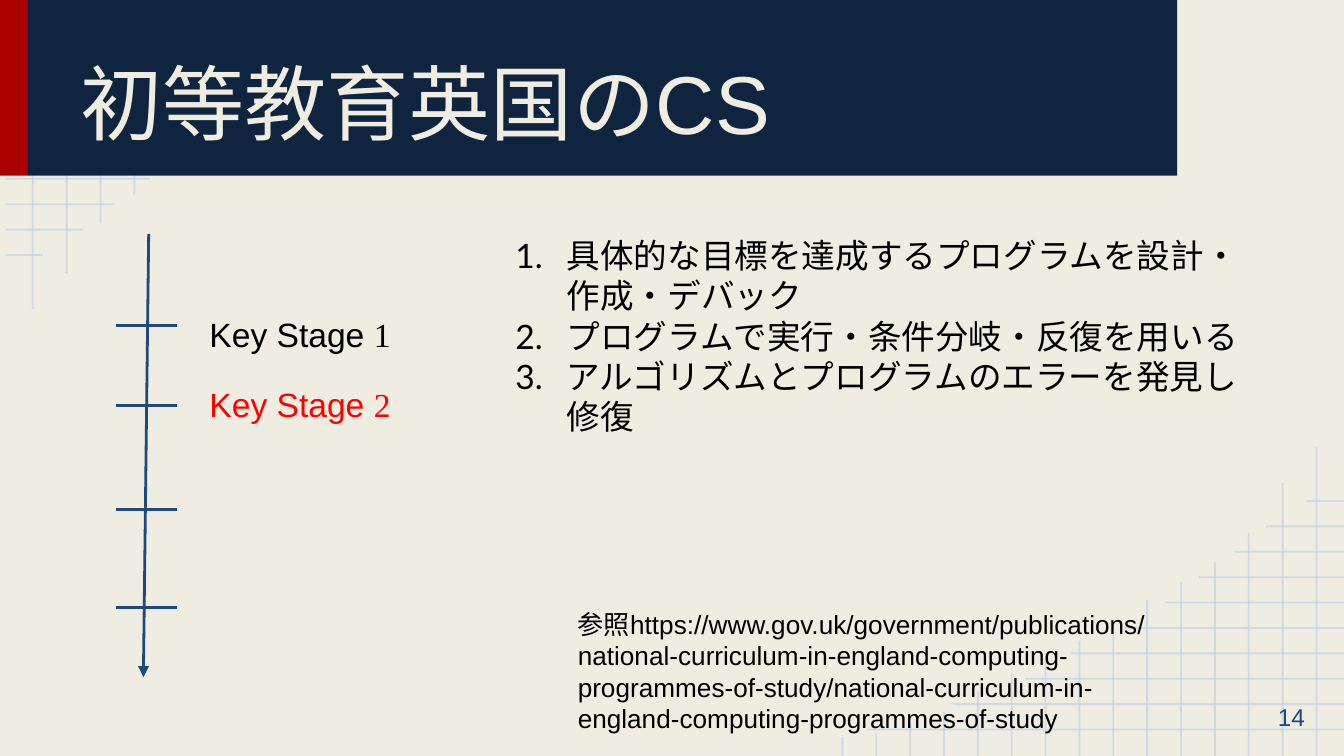
import pptx
import pptx.dml.color
import pptx.enum.shapes
import pptx.enum.text
import pptx.oxml
import pptx.oxml.ns
import pptx.util
from pptx.util import Cm

SLIDE_WIDTH, SLIDE_HEIGHT = 25.4, 14.29
CREAM, NAVY, RED = "EFEDE2", "0F243E", "AB0101"
BLUE, PALE_BLUE = "1F497D", "B7CCE4"
BLACK, HIGHLIGHT = "000000", "FF0000"

ROW_LENGTHS = [9.12, 7.49, 6.12, 5.26, 4.24, 3.48, 2.84, 2.16, 1.57, 0.81]
COLUMN_DEPTHS = [5.84, 5.16, 4.22, 3.68, 3.28, 2.95, 2.51, 2.18,
                 1.83, 1.57, 1.22, 0.84, 0.61, 0.43, 0.36]

GOALS = [
    "具体的な目標を達成するプログラムを設計・作成・デバック",
    "プログラムで実行・条件分岐・反復を用いる",
    "アルゴリズムとプログラムのエラーを発見し修復",
]
REFERENCE = (
    "参照https://www.gov.uk/government/publications/"
    "national-curriculum-in-england-computing-programmes-of-study/"
    "national-curriculum-in-england-computing-programmes-of-study"
)


def color(hex_value):
    return pptx.dml.color.RGBColor.from_string(hex_value)


def add_xml(parent, tag, **attributes):
    child = pptx.oxml.parse_xml(
        f'<a:{tag} xmlns:a="http://schemas.openxmlformats.org/drawingml/2006/main"/>')
    for name, value in attributes.items():
        child.set(name, str(value))
    parent.append(child)
    return child


def add_line(slide, start, end, hex_value, width):
    line = slide.shapes.add_connector(
        pptx.enum.shapes.MSO_CONNECTOR.STRAIGHT,
        *(Cm(value) for value in (*start, *end)))
    line.line.color.rgb = color(hex_value)
    line.line.width = pptx.util.Pt(width)
    add_xml(line.element.spPr, "effectLst")
    return line


def add_run(paragraph, text, size, hex_value, font="Arial"):
    run = paragraph.add_run()
    run.text = text
    run.font.size = pptx.util.Pt(size)
    run.font.color.rgb = color(hex_value)
    run.font.name = font
    add_xml(run.font._element, "ea", typeface=font)


def add_text_frame(slide, box, anchor="TOP"):
    frame = slide.shapes.add_textbox(*(Cm(value) for value in box)).text_frame
    frame.word_wrap = True
    frame.vertical_anchor = getattr(pptx.enum.text.MSO_ANCHOR, anchor)
    frame.margin_left = frame.margin_right = Cm(0.25)
    frame.margin_top = frame.margin_bottom = Cm(0.25)
    return frame


def add_corner_grid(slide, corner, direction):
    """Draw the fading grid from a corner; direction -1 turns it half round."""
    def place(x, y):
        return corner[0] + direction * x, corner[1] + direction * y

    grid_lines = []
    for i, length in enumerate(ROW_LENGTHS):
        y = 0.5 + 0.48 * i
        grid_lines.append((place(0.1, y), place(length, y)))
    for i, depth in enumerate(COLUMN_DEPTHS):
        x = 0.62 + 0.64 * i
        grid_lines.append((place(x, depth), place(x, 0)))
    for start, end in grid_lines:
        line = add_line(slide, start, end, PALE_BLUE, 1)
        tint = line.element.find(".//" + pptx.oxml.ns.qn("a:srgbClr"))
        add_xml(tint, "alpha", val=54000)


def add_title_banner(slide, box, title):
    left, top, width, height = box
    stripe = 0.53
    for x, part_width, fill in ((left, stripe, RED),
                                (left + stripe, width - stripe, NAVY)):
        band = slide.shapes.add_shape(
            pptx.enum.shapes.MSO_SHAPE.RECTANGLE,
            Cm(x), Cm(top), Cm(part_width), Cm(height))
        band.shadow.inherit = False
        band.fill.solid()
        band.fill.fore_color.rgb = color(fill)
        band.line.fill.background()
    frame = add_text_frame(
        slide, (left + 1.27, top + 0.31, 20.32, height - 0.53), "BOTTOM")
    add_run(frame.paragraphs[0], title, 44, CREAM)


def add_stage_timeline(slide, box):
    left, top, width, height = box
    arrow = add_line(slide, (left + 0.61, top), (left + 0.51, top + height), BLUE, 1.5)
    add_xml(arrow.line._get_or_add_ln(), "tailEnd", type="triangle")
    for offset in (1.73, 3.25, 5.21, 7.06):
        add_line(slide, (left, top + offset), (left + width, top + offset), BLUE, 1.5)


def add_stage_labels(slide, box):
    left, top, width, height = box
    stages = (("1", BLACK), ("2", HIGHLIGHT))
    step = height / len(stages)
    for i, (number, hex_value) in enumerate(stages):
        frame = add_text_frame(slide, (left, top + i * step, width, step))
        add_run(frame.paragraphs[0], "Key Stage ", 18, hex_value)
        add_run(frame.paragraphs[0], number, 18, hex_value, "Times New Roman")


def add_goals(slide, box):
    frame = add_text_frame(slide, box)
    for i, goal in enumerate(GOALS):
        paragraph = frame.add_paragraph() if i else frame.paragraphs[0]
        properties = paragraph._p.get_or_add_pPr()
        properties.set("marL", str(Cm(1.27)))
        properties.set("indent", str(Cm(-0.97)))
        add_xml(add_xml(properties, "buClr"), "srgbClr", val=BLACK)
        add_xml(properties, "buFont", typeface="Lato")
        add_xml(properties, "buAutoNum", type="arabicPeriod")
        add_run(paragraph, goal, 18, BLACK, "Lato")


def add_reference(slide, box):
    frame = add_text_frame(slide, box, "MIDDLE")
    add_run(frame.paragraphs[0], REFERENCE, 14, BLACK)


def add_page_number(slide, box, number):
    frame = add_text_frame(slide, box, "MIDDLE")
    frame.paragraphs[0].alignment = pptx.enum.text.PP_ALIGN.RIGHT
    add_run(frame.paragraphs[0], number, 13, BLUE)


def main():
    presentation = pptx.Presentation()
    presentation.slide_width = Cm(SLIDE_WIDTH)
    presentation.slide_height = Cm(SLIDE_HEIGHT)
    slide = presentation.slides.add_slide(presentation.slide_layouts[6])
    slide.background.fill.solid()
    slide.background.fill.fore_color.rgb = color(CREAM)

    add_corner_grid(slide, (0, 0), 1)
    add_corner_grid(slide, (SLIDE_WIDTH + 0.1, SLIDE_HEIGHT), -1)
    add_title_banner(slide, (0, -0.03, 22.25, 3.35), "初等教育英国のCS")
    add_page_number(slide, (23.39, 12.83, 1.52, 1.45), "14")
    add_stage_timeline(slide, (2.2, 4.42, 1.15, 8.38))
    add_stage_labels(slide, (3.71, 5.69, 4.32, 2.64))
    add_goals(slide, (9.19, 4.19, 14.78, 6.2))
    add_reference(slide, (10.67, 11.48, 11.81, 2.41))
    presentation.save("out.pptx")


if __name__ == "__main__":
    main()
